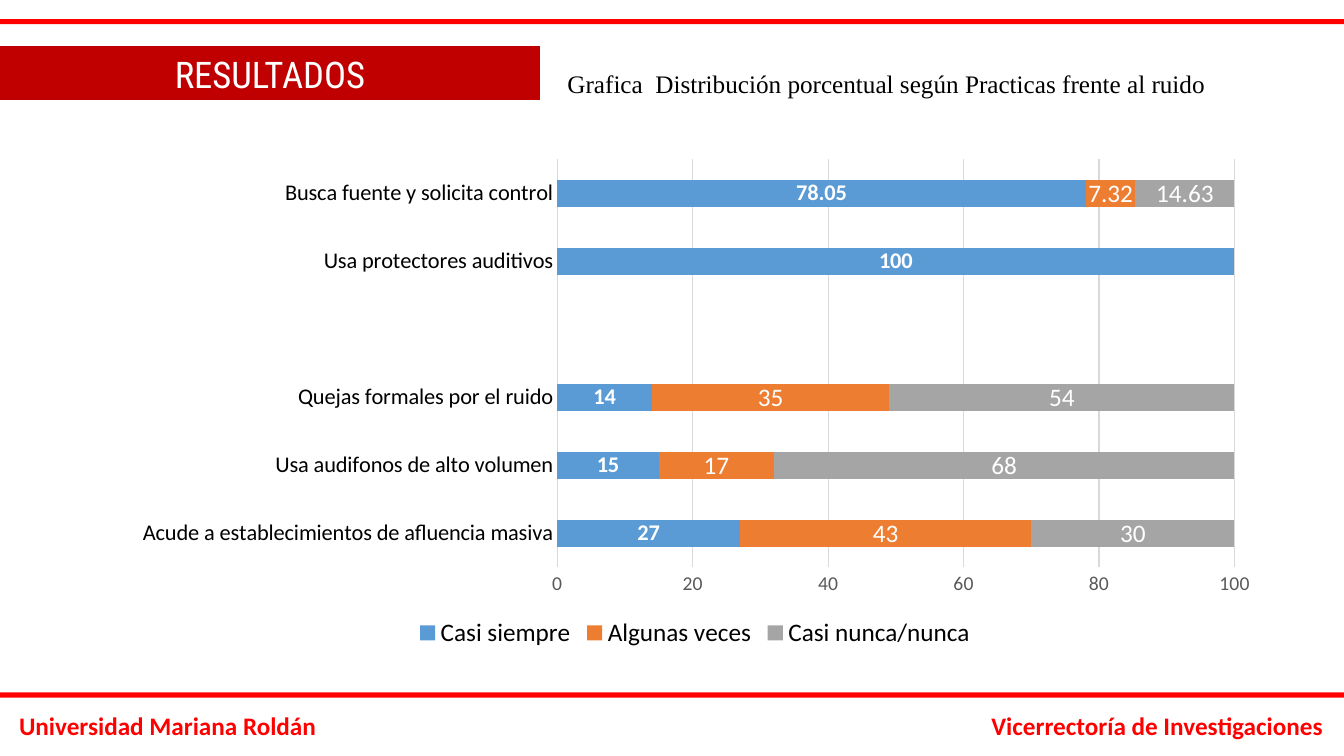
from lxml import etree
from pptx import Presentation
from pptx.chart.data import CategoryChartData
from pptx.dml.color import RGBColor
from pptx.enum.chart import XL_CHART_TYPE, XL_LABEL_POSITION, XL_LEGEND_POSITION, XL_TICK_MARK
from pptx.enum.shapes import MSO_SHAPE
from pptx.enum.text import MSO_ANCHOR, PP_ALIGN
from pptx.oxml.ns import qn
from pptx.util import Cm, Pt

STACKED = XL_CHART_TYPE.BAR_STACKED
CENTER_LABEL = XL_LABEL_POSITION.CENTER
BOTTOM_LEGEND = XL_LEGEND_POSITION.BOTTOM
NO_TICK = XL_TICK_MARK.NONE
RECTANGLE = MSO_SHAPE.RECTANGLE
ANCHOR_BOTTOM, ANCHOR_TOP = MSO_ANCHOR.BOTTOM, MSO_ANCHOR.TOP
LEFT, CENTER, RIGHT = PP_ALIGN.LEFT, PP_ALIGN.CENTER, PP_ALIGN.RIGHT

SLIDE_WIDTH, SLIDE_HEIGHT = 33.87, 19.05
COLORS = {
    "rule": "FF0000", "banner": "C00000", "white": "FFFFFF", "black": "000000",
    "grid": "D9D9D9", "scale": "595959",
    "always": "5B9BD5", "sometimes": "ED7D31", "never": "A5A5A5",
}
PRACTICES = [
    "Acude a establecimientos de afluencia masiva",
    "Usa audifonos de alto volumen",
    "Quejas formales por el ruido",
    "",
    "Usa protectores auditivos",
    "Busca fuente y solicita control",
]
FREQUENCIES = [
    ("Casi siempre", "always", (27, 15, 14, None, 100, 78.05), 16, True),
    ("Algunas veces", "sometimes", (43, 17, 35, None, None, 7.32), 18, False),
    ("Casi nunca/nunca", "never", (30, 68, 54, None, None, 14.63), 18, False),
]
PLOT_LAYOUT = {"x": 0.38, "y": 0.02, "w": 0.59, "h": 0.81}


def rgb(color):
    """Return the named palette colour."""
    return RGBColor.from_string(COLORS[color])


def style_font(font, size, color, name="Calibri", bold=False):
    """Apply size, colour, typeface and weight to a font."""
    font.size, font.name, font.bold = Pt(size), name, bold
    font.color.rgb = rgb(color)


def add_block(slide, box, color):
    """Add a solid rectangle in the box."""
    block = slide.shapes.add_shape(RECTANGLE, *map(Cm, box))
    block.shadow.inherit = False
    block.fill.solid()
    block.fill.fore_color.rgb = rgb(color)
    block.line.fill.background()
    return block


def add_line_of_text(slide, box, text, align, color, **font_options):
    """Add a wrapped one-line text box."""
    frame = slide.shapes.add_textbox(*map(Cm, box)).text_frame
    frame.word_wrap = True
    frame.vertical_anchor = ANCHOR_TOP
    line = frame.paragraphs[0]
    line.text, line.alignment = text, align
    style_font(line.font, 18, color, **font_options)


def add_page_frame(slide, box):
    """Draw the top and bottom rules and the footer names within the page box."""
    left, top, width, height = box
    for offset in (0.48, height - 1.6):
        add_block(slide, (left, top + offset, width, 0.13), "rule")
    footer_top = top + height - 1.27
    add_line_of_text(slide, (left + 0.23, footer_top, 9, 1.02),
                     "Universidad Mariana Roldán", LEFT, "rule", bold=True)
    add_line_of_text(slide, (left + width - 11.13, footer_top, 10.85, 1.02),
                     "Vicerrectoría de Investigaciones", RIGHT, "rule", bold=True)


def add_heading(slide, box):
    """Place the section banner and the chart caption beside it."""
    left, top, width, height = box
    banner_width = 13.61
    banner = add_block(slide, (left, top, banner_width, height), "banner")
    banner.line.color.rgb = rgb("banner")
    banner.line.width = Pt(0.75)
    frame = banner.text_frame
    frame.vertical_anchor = ANCHOR_BOTTOM
    frame.margin_left = frame.margin_right = Cm(0.2)
    frame.margin_top = frame.margin_bottom = Cm(0.1)
    section = frame.paragraphs[0]
    section.text, section.alignment, section.line_spacing = "RESULTADOS", CENTER, 0.9
    style_font(section.font, 26.2, "white", name="Roboto Condensed")
    caption_left = left + banner_width + 0.44
    add_line_of_text(slide, (caption_left, top + 0.43, left + width - caption_left, 1.02),
                     "Grafica  Distribución porcentual según Practicas frente al ruido",
                     LEFT, "black", name="Times New Roman")


def fix_plot_area(chart):
    """Pin the inner plot area to its share of the chart."""
    plot_area = chart.plots[0]._element.getparent()
    for old_layout in plot_area.findall(qn("c:layout")):
        plot_area.remove(old_layout)
    layout = etree.Element(qn("c:layout"))
    plot_area.insert(0, layout)
    manual = etree.SubElement(layout, qn("c:manualLayout"))
    settings = {"layoutTarget": "inner", "xMode": "edge", "yMode": "edge", **PLOT_LAYOUT}
    for tag, value in settings.items():
        etree.SubElement(manual, qn(f"c:{tag}")).set("val", str(value))


def style_axes(chart):
    """Format the practice axis and the percentage scale."""
    practices, scale = chart.category_axis, chart.value_axis
    for axis in (practices, scale):
        axis.major_tick_mark = axis.minor_tick_mark = NO_TICK
    style_font(practices.tick_labels.font, 16, "black")
    style_font(scale.tick_labels.font, 14, "scale")
    scale.minimum_scale, scale.maximum_scale, scale.major_unit = 0, 100, 20
    scale.format.line.fill.background()
    for line in (practices.format.line, scale.major_gridlines.format.line):
        line.color.rgb = rgb("grid")
        line.width = Pt(0.75)


def add_practices_chart(slide, box):
    """Add the stacked bars of noise practices by frequency."""
    data = CategoryChartData()
    data.categories = PRACTICES
    for name, _, values, _, _ in FREQUENCIES:
        data.add_series(name, values)
    chart = slide.shapes.add_chart(STACKED, *map(Cm, box), data).chart
    chart.has_title = False
    style_font(chart.font, 10, "black")
    chart.has_legend = True
    chart.legend.position = BOTTOM_LEGEND
    chart.legend.include_in_layout = False
    style_font(chart.legend.font, 18, "black")
    style_axes(chart)
    fix_plot_area(chart)
    bars = chart.plots[0]
    bars.gap_width, bars.overlap, bars.vary_by_categories = 150, 100, False
    for series, (_, color, _, size, bold) in zip(bars.series, FREQUENCIES):
        series.format.fill.solid()
        series.format.fill.fore_color.rgb = rgb(color)
        labels = series.data_labels
        labels.show_value = True
        labels.position = CENTER_LABEL
        style_font(labels.font, size, "white", bold=bold)


def main():
    """Build and save the results slide."""
    presentation = Presentation()
    presentation.slide_width, presentation.slide_height = Cm(SLIDE_WIDTH), Cm(SLIDE_HEIGHT)
    slide = presentation.slides.add_slide(presentation.slide_layouts[6])
    add_page_frame(slide, (0, 0, SLIDE_WIDTH, SLIDE_HEIGHT))
    add_heading(slide, (0, 1.17, 32.82, 1.35))
    add_practices_chart(slide, (3.05, 3.76, 28.93, 12.7))
    presentation.save("out.pptx")


if __name__ == "__main__":
    main()
